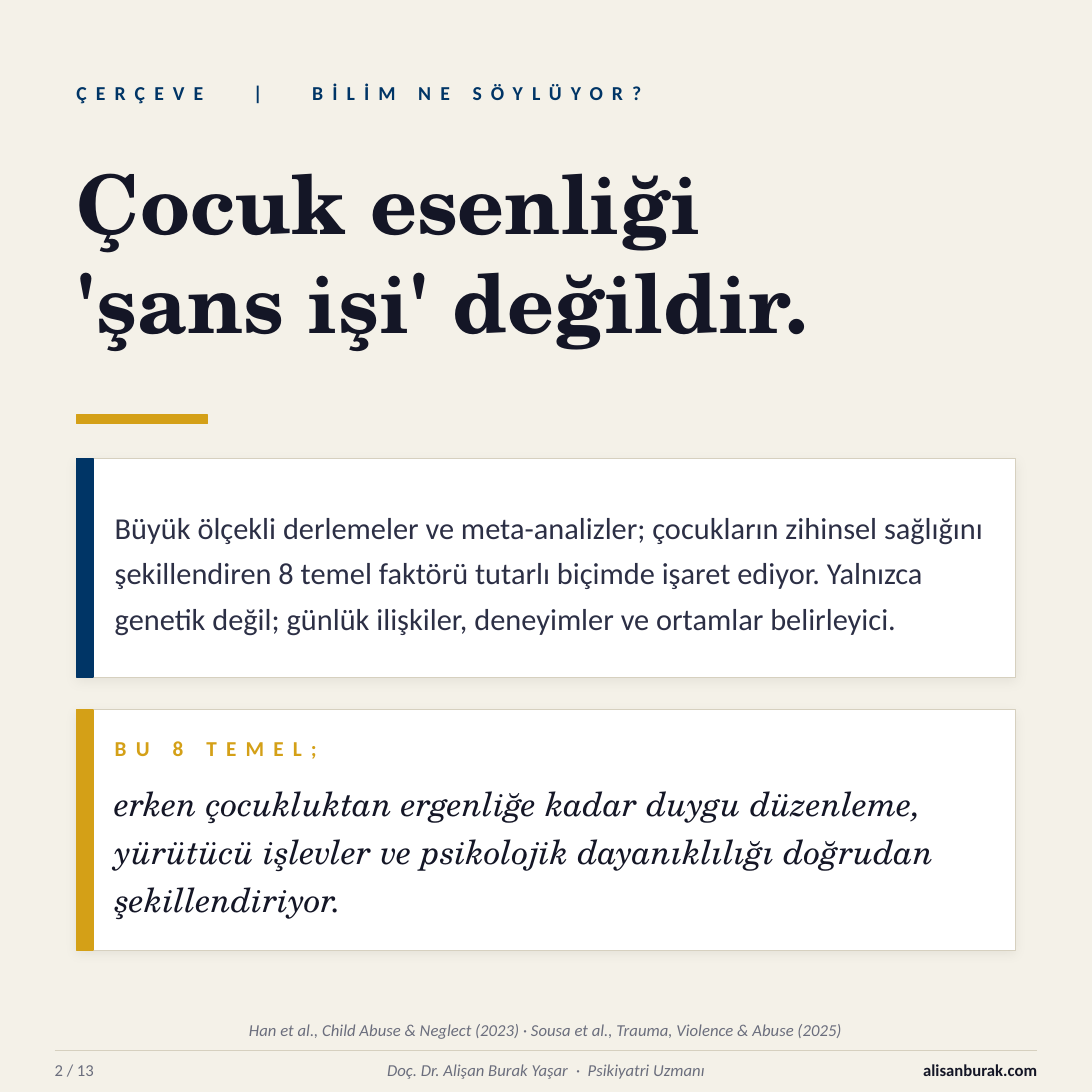
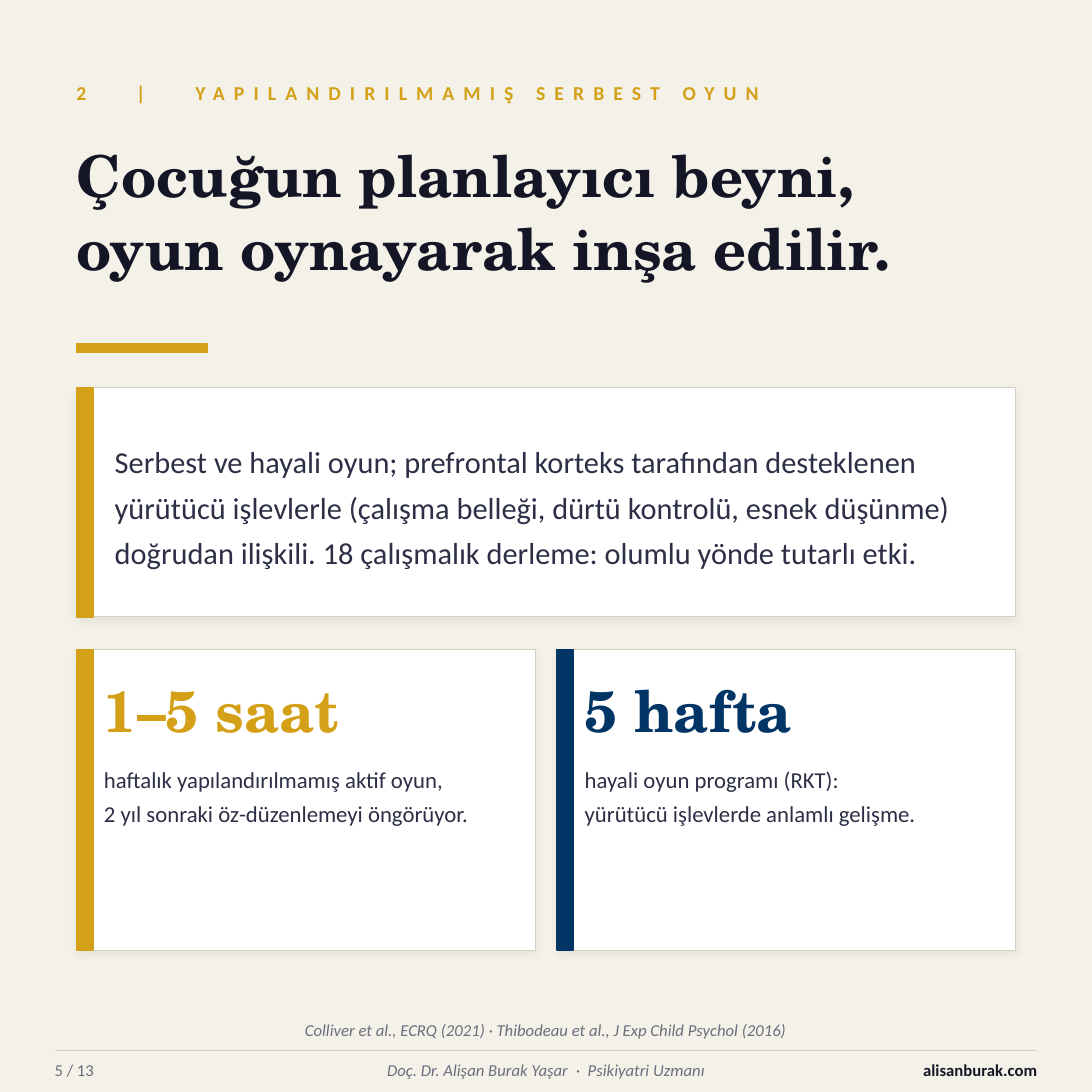
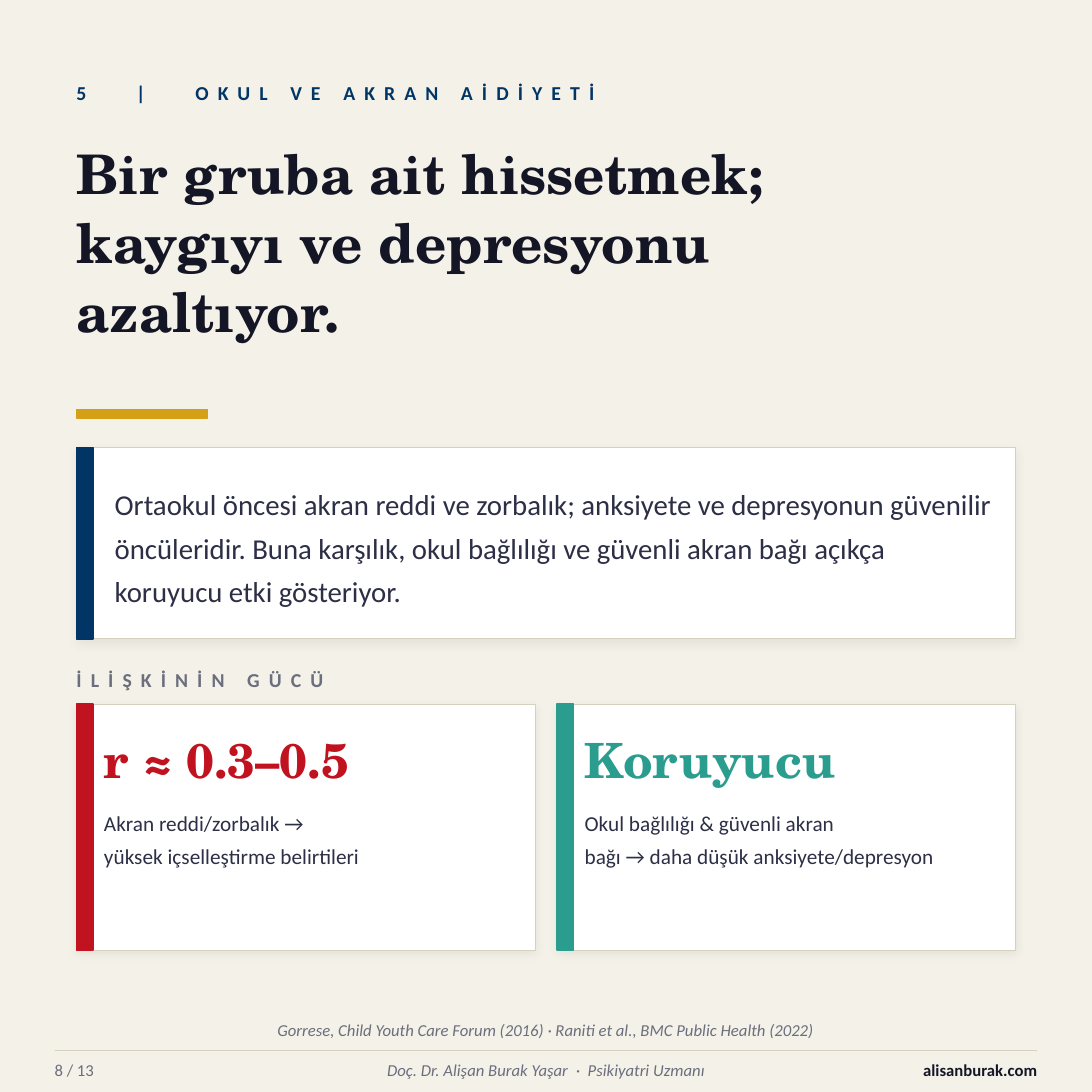
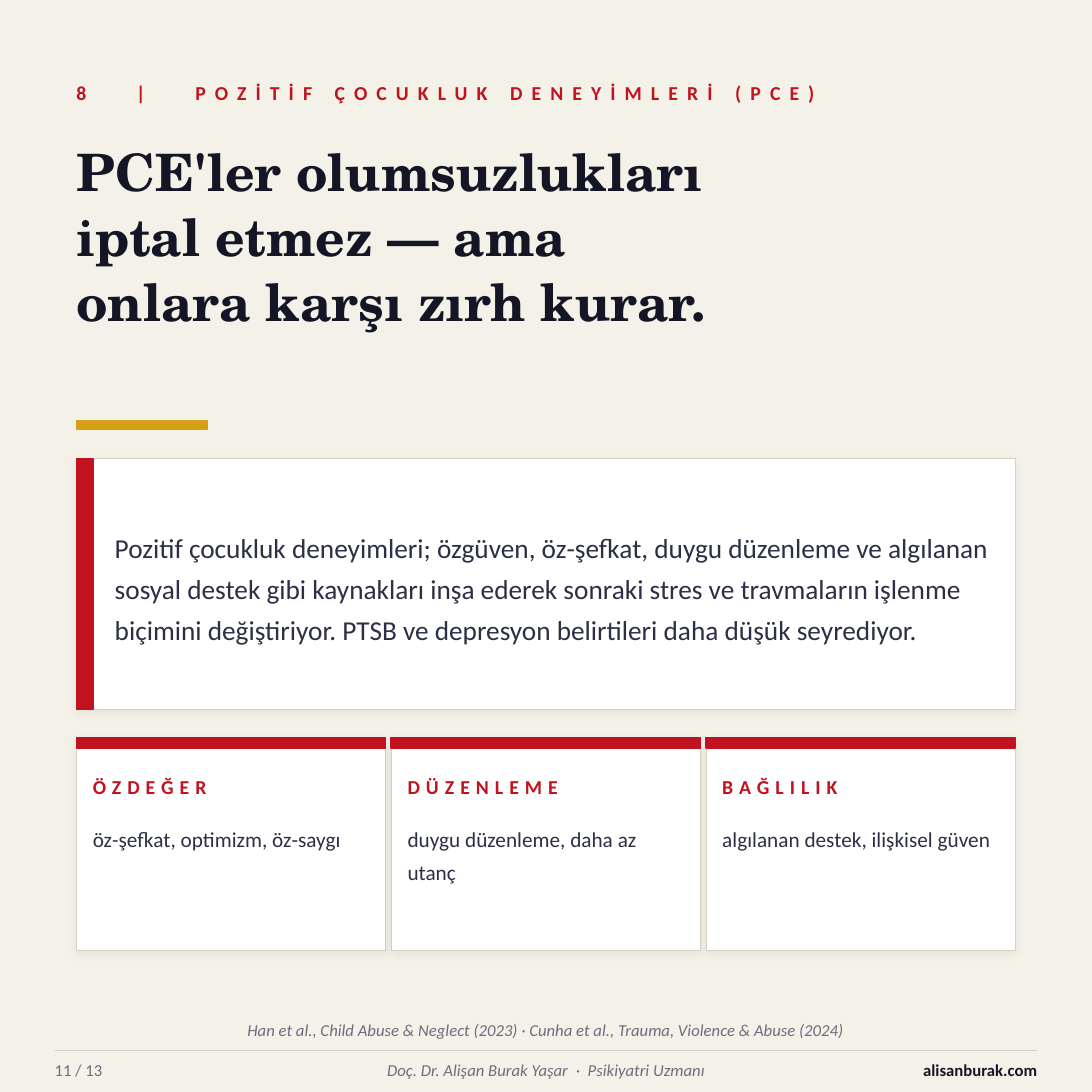
import pptx
import pptx.dml.color
import pptx.enum.shapes
import pptx.enum.text
import pptx.oxml.ns
import pptx.util
from lxml import etree

Cm, Pt = pptx.util.Cm, pptx.util.Pt
ALIGN = pptx.enum.text.PP_ALIGN
ANCHOR = pptx.enum.text.MSO_ANCHOR
qn = pptx.oxml.ns.qn

COLORS = {
    "paper": "F4F1E8", "white": "FFFFFF", "border": "D6D0BF",
    "ink": "141626", "body": "2C2F45", "muted": "6B6E7D",
    "navy": "003566", "gold": "D4A017", "red": "C1121F", "teal": "2A9D8F",
}
SANS, SERIF = "Calibri", "TeX Gyre Schola"

# Shared geometry, in cm
SIDE = 25.4
LEFT, WIDTH = 1.78, 21.84
FOOT_LEFT, FOOT_WIDTH = 1.27, 22.86
PAD = 0.38
BAR = 0.38


def rgb(name):
    return pptx.dml.color.RGBColor.from_string(COLORS[name])


def add_text(s, box, text, size, color, font=SANS, bold=False, italic=False,
             align=ALIGN.LEFT, anchor=ANCHOR.TOP, leading=None, spacing=0,
             sep=None, gap=0):
    """Text box; the spaces around sep are widened by gap points."""
    sp = s.shapes.add_textbox(*map(Cm, box))
    tf = sp.text_frame
    tf.word_wrap = True
    tf.vertical_anchor = anchor
    tf.margin_left = tf.margin_top = tf.margin_right = tf.margin_bottom = 0
    for i, line in enumerate(text.split("\n")):
        p = tf.add_paragraph() if i else tf.paragraphs[0]
        p.alignment = align
        if leading:
            p.line_spacing = leading
        parts = [line]
        if sep:
            before, after = line.split(f" {sep} ")
            parts = [before, " ", sep, " ", after]
        for part in parts:
            r = p.add_run()
            r.text = part
            r.font.size, r.font.name = Pt(size), font
            r.font.bold, r.font.italic = bold, italic
            r.font.color.rgb = rgb(color)
            track = gap if part == " " else spacing
            if track:
                r._r.get_or_add_rPr().set("spc", str(round(track * 100)))
    return sp


def add_label(s, box, text, color, size=13, spacing=6, **kw):
    add_text(s, box, text, size, color, bold=True, anchor=ANCHOR.MIDDLE,
             spacing=spacing, **kw)


def add_rect(s, box, fill, line=None, weight=1):
    sp = s.shapes.add_shape(pptx.enum.shapes.MSO_SHAPE.RECTANGLE, *map(Cm, box))
    sp.shadow.inherit = False
    sp.fill.solid()
    sp.fill.fore_color.rgb = rgb(fill)
    sp.line.color.rgb = rgb(line or fill)
    sp.line.width = Pt(weight)
    return sp


def add_card(s, box, accent, opacity=5, blur=6, top_band=False):
    """White card with a soft shadow and an accent at its left or top."""
    x, y, w, h = box
    sp = add_rect(s, box, "white", "border", 0.5)
    effects = sp._element.spPr.find(qn("a:effectLst"))
    shadow = etree.SubElement(
        effects, qn("a:outerShdw"), blurRad=str(Pt(blur)), dist=str(Pt(2)),
        dir="5400000", algn="bl", rotWithShape="0")
    color = etree.SubElement(shadow, qn("a:srgbClr"), val="000000")
    etree.SubElement(color, qn("a:alpha"), val=str(opacity * 1000))
    add_rect(s, (x, y, w, 0.25) if top_band else (x, y, BAR, h), accent)


def text_panel(s, box, accent, text, size, blur=6):
    x, y, w, h = box
    add_card(s, box, accent, 6, blur)
    add_text(s, (x + 0.89, y + PAD, w - 0.89 - PAD, h - 2 * PAD), text, size,
             "body", anchor=ANCHOR.MIDDLE, leading=1.25)


def quote_panel(s, box, accent, label, text):
    x, y, w, h = box
    add_card(s, box, accent, 6, 8)
    tx, tw = x + 0.89, w - 0.89 - PAD
    add_label(s, (tx, y + PAD, tw, 1.02), label, accent, 14)
    add_text(s, (tx, y + 1.52, tw, h - 1.78), text, 22, "ink", SERIF,
             italic=True, leading=1.2)


def stat_card(s, box, accent, figure, text, figure_size, figure_h, size, leading):
    x, y, w, h = box
    add_card(s, box, accent)
    tx, tw = x + 0.64, w - 0.64 - PAD
    add_text(s, (tx, y + PAD, tw, figure_h), figure, figure_size, accent,
             SERIF, bold=True, anchor=ANCHOR.MIDDLE)
    top = PAD + figure_h + 0.13
    add_text(s, (tx, y + top, tw, h - top - 0.25), text, size, "body",
             leading=leading)


def topic_card(s, box, accent, label, text):
    x, y, w, h = box
    add_card(s, box, accent, top_band=True)
    tx, tw = x + PAD, w - 2 * PAD
    add_label(s, (tx, y + 0.64, tw, 1.02), label, accent, spacing=4)
    add_text(s, (tx, y + 1.9, tw, h - 2.15), text, 14, "body", leading=1.3)


def card_row(s, top, height, width, gap, draw, cards, **kw):
    """Cards side by side at equal gaps, starting at the left margin."""
    for i, card in enumerate(cards):
        draw(s, (LEFT + i * (width + gap), top, width, height), *card, **kw)


def header(s, accent, eyebrow, title, size, top, height, rule_top, leading=1.05):
    add_label(s, (LEFT, 1.65, WIDTH, 1.02), eyebrow, accent, sep="|", gap=23.9)
    add_text(s, (LEFT, top, WIDTH, height), title, size, "ink", SERIF,
             bold=True, leading=leading)
    add_rect(s, (LEFT, rule_top, 3.05, 0.2), "gold")


def footer(s, number, source):
    right = FOOT_LEFT + FOOT_WIDTH
    mid = {"anchor": ANCHOR.MIDDLE}
    add_text(s, (FOOT_LEFT, 23.57, FOOT_WIDTH, 0.76), source, 11, "muted",
             italic=True, align=ALIGN.CENTER, **mid)
    line = s.shapes.add_connector(
        pptx.enum.shapes.MSO_CONNECTOR.STRAIGHT,
        Cm(FOOT_LEFT), Cm(24.43), Cm(right), Cm(24.43))
    line.line.color.rgb = rgb("border")
    line.line.width = Pt(0.75)
    etree.SubElement(line._element.spPr, qn("a:effectLst"))
    y, h, side = 24.51, 0.76, 3.81
    add_text(s, (FOOT_LEFT, y, side, h), f"{number} / 13", 11, "muted", **mid)
    add_text(s, (FOOT_LEFT + side, y, FOOT_WIDTH - 2 * side, h),
             "Doç. Dr. Alişan Burak Yaşar · Psikiyatri Uzmanı", 11, "muted",
             italic=True, align=ALIGN.CENTER, sep="·", gap=2.5, **mid)
    add_text(s, (right - side, y, side, h), "alisanburak.com", 11, "ink",
             bold=True, align=ALIGN.RIGHT, **mid)


def new_slide(prs):
    s = prs.slides.add_slide(prs.slide_layouts[6])
    s.background.fill.solid()
    s.background.fill.fore_color.rgb = rgb("paper")
    return s


def framework_slide(prs):
    s = new_slide(prs)
    header(s, "navy", "ÇERÇEVE | BİLİM NE SÖYLÜYOR?",
           "Çocuk esenliği\n'şans işi' değildir.", 54, 3.56, 5.59, 9.65, None)
    text_panel(s, (LEFT, 10.67, WIDTH, 5.08), "navy",
               "Büyük ölçekli derlemeler ve meta-analizler; çocukların zihinsel "
               "sağlığını şekillendiren 8 temel faktörü tutarlı biçimde işaret "
               "ediyor. Yalnızca genetik değil; günlük ilişkiler, deneyimler ve "
               "ortamlar belirleyici.", 20, blur=8)
    quote_panel(s, (LEFT, 16.51, WIDTH, 5.59), "gold", "BU 8 TEMEL;",
                "erken çocukluktan ergenliğe kadar duygu düzenleme, yürütücü "
                "işlevler ve psikolojik dayanıklılığı doğrudan şekillendiriyor.")
    footer(s, 2, "Han et al., Child Abuse & Neglect (2023) · "
                 "Sousa et al., Trauma, Violence & Abuse (2025)")


def play_slide(prs):
    s = new_slide(prs)
    header(s, "gold", "2 | YAPILANDIRILMAMIŞ SERBEST OYUN",
           "Çocuğun planlayıcı beyni,\noyun oynayarak inşa edilir.",
           38, 3.18, 4.57, 8)
    text_panel(s, (LEFT, 9.02, WIDTH, 5.33), "gold",
               "Serbest ve hayali oyun; prefrontal korteks tarafından desteklenen "
               "yürütücü işlevlerle (çalışma belleği, dürtü kontrolü, esnek "
               "düşünme) doğrudan ilişkili. 18 çalışmalık derleme: olumlu yönde "
               "tutarlı etki.", 20)
    card_row(s, 15.11, 6.99, 10.67, 0.51, stat_card, [
        ("gold", "1–5 saat", "haftalık yapılandırılmamış aktif oyun,\n"
                             "2 yıl sonraki öz-düzenlemeyi öngörüyor."),
        ("navy", "5 hafta", "hayali oyun programı (RKT):\n"
                            "yürütücü işlevlerde anlamlı gelişme."),
    ], figure_size=38, figure_h=2.03, size=15, leading=1.25)
    footer(s, 5, "Colliver et al., ECRQ (2021) · "
                 "Thibodeau et al., J Exp Child Psychol (2016)")


def belonging_slide(prs):
    s = new_slide(prs)
    header(s, "navy", "5 | OKUL VE AKRAN AİDİYETİ",
           "Bir gruba ait hissetmek;\nkaygıyı ve depresyonu\nazaltıyor.",
           36, 3.18, 6.1, 9.53)
    text_panel(s, (LEFT, 10.41, WIDTH, 4.45), "navy",
               "Ortaokul öncesi akran reddi ve zorbalık; anksiyete ve depresyonun "
               "güvenilir öncüleridir. Buna karşılık, okul bağlılığı ve güvenli "
               "akran bağı açıkça koruyucu etki gösteriyor.", 19)
    add_label(s, (LEFT, 15.37, WIDTH, 0.89), "İLİŞKİNİN GÜCÜ", "muted")
    card_row(s, 16.38, 5.72, 10.67, 0.51, stat_card, [
        ("red", "r ≈ 0.3–0.5", "Akran reddi/zorbalık →\n"
                               "yüksek içselleştirme belirtileri"),
        ("teal", "Koruyucu", "Okul bağlılığı & güvenli akran\n"
                             "bağı → daha düşük anksiyete/depresyon"),
    ], figure_size=32, figure_h=1.78, size=14, leading=1.3)
    footer(s, 8, "Gorrese, Child Youth Care Forum (2016) · "
                 "Raniti et al., BMC Public Health (2022)")


def experiences_slide(prs):
    s = new_slide(prs)
    header(s, "red", "8 | POZİTİF ÇOCUKLUK DENEYİMLERİ (PCE)",
           "PCE'ler olumsuzlukları\niptal etmez — ama\nonlara karşı zırh kurar.",
           34, 3.18, 6.35, 9.78)
    text_panel(s, (LEFT, 10.67, WIDTH, 5.84), "red",
               "Pozitif çocukluk deneyimleri; özgüven, öz-şefkat, duygu düzenleme "
               "ve algılanan sosyal destek gibi kaynakları inşa ederek sonraki "
               "stres ve travmaların işlenme biçimini değiştiriyor. PTSB ve "
               "depresyon belirtileri daha düşük seyrediyor.", 18)
    card_row(s, 17.15, 4.95, 7.19, 0.13, topic_card, [
        ("red", "ÖZDEĞER", "öz-şefkat, optimizm, öz-saygı"),
        ("red", "DÜZENLEME", "duygu düzenleme, daha az utanç"),
        ("red", "BAĞLILIK", "algılanan destek, ilişkisel güven"),
    ])
    footer(s, 11, "Han et al., Child Abuse & Neglect (2023) · "
                  "Cunha et al., Trauma, Violence & Abuse (2024)")


def main():
    prs = pptx.Presentation()
    prs.slide_width = prs.slide_height = Cm(SIDE)
    for build in (framework_slide, play_slide, belonging_slide, experiences_slide):
        build(prs)
    prs.save("out.pptx")


if __name__ == "__main__":
    main()
